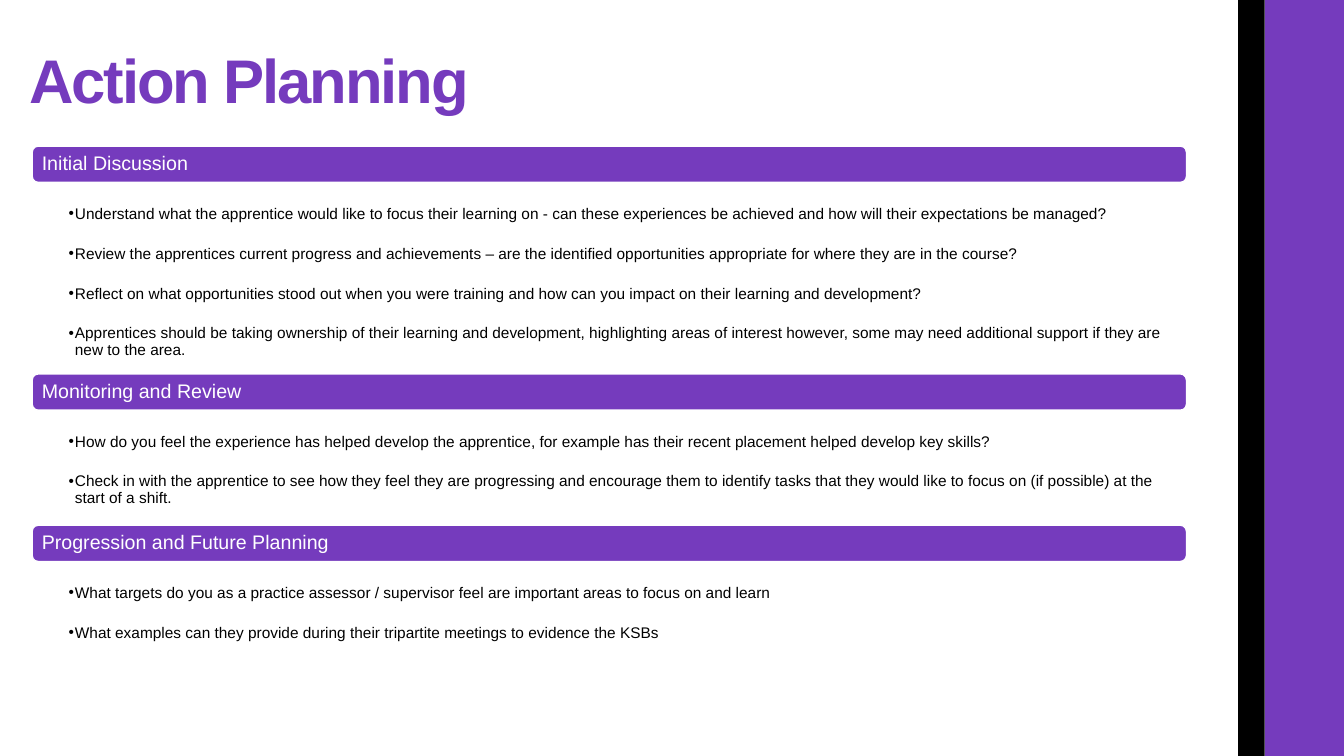
from pptx import Presentation
from pptx.util import Pt
from pptx.dml.color import RGBColor
from pptx.enum.shapes import MSO_SHAPE as SHAPE
from pptx.enum.text import MSO_ANCHOR as ANCHOR, PP_ALIGN as ALIGN
from lxml import etree

PURPLE, BLACK, WHITE = "753BBD", "000000", "FFFFFF"
NS = "{http://schemas.openxmlformats.org/drawingml/2006/main}"
LEFT, WIDTH, BAR_HEIGHT = 23, 824.5, 25.9

SECTIONS = [
    ("Initial Discussion", 136.8, [
        "Understand what the apprentice would like to focus their learning on - can these experiences be achieved and how will their expectations be managed?",
        "Review the apprentices current progress and achievements – are the identified opportunities appropriate for where they are in the course?",
        "Reflect on what opportunities stood out when you were training and how can you impact on their learning and development?",
        "Apprentices should be taking ownership of their learning and development, highlighting areas of interest however, some may need additional support if they are new to the area.",
    ]),
    ("Monitoring and Review", 82.2, [
        "How do you feel the experience has helped develop the apprentice, for example has their recent placement helped develop key skills?",
        "Check in with the apprentice to see how they feel they are progressing and encourage them to identify tasks that they would like to focus on (if possible) at the start of a shift.",
    ]),
    ("Progression and Future Planning", 56.9, [
        "What targets do you as a practice assessor / supervisor feel are important areas to focus on and learn",
        "What examples can they provide during their tripartite meetings to evidence the KSBs",
    ]),
]


def add_block(kind, left, top, width, height, color):
    sp = s.shapes.add_shape(kind, Pt(left), Pt(top), Pt(width), Pt(height))
    sp.shadow.inherit = False
    sp.fill.solid()
    sp.fill.fore_color.rgb = RGBColor.from_string(color)
    sp.line.fill.background()
    return sp


def set_text(tf, lines, size, color, insets, anchor):
    tf.word_wrap = True
    tf.vertical_anchor = anchor
    tf.margin_left, tf.margin_top, tf.margin_right, tf.margin_bottom = map(Pt, insets)
    tf.text = "\n".join(lines)
    for p in tf.paragraphs:
        p.alignment = ALIGN.LEFT
        p.line_spacing = 0.9
        for r in p.runs:
            r.font.name = "Arial"
            r.font.size = Pt(size)
            r.font.color.rgb = RGBColor.from_string(color)


prs = Presentation()
prs.slide_width, prs.slide_height = Pt(960), Pt(540)
s = prs.slides.add_slide(prs.slide_layouts[5])

add_block(SHAPE.RECTANGLE, 903.4, 0, 56.6, 540, PURPLE)
add_block(SHAPE.RECTANGLE, 884.4, 0, 19, 540, BLACK)

title = s.shapes.title
title.left, title.top, title.width, title.height = Pt(21), Pt(14.4), Pt(825), Pt(90)
set_text(title.text_frame, ["Action Planning"], 44, PURPLE, (0, 0, 0, 0), ANCHOR.MIDDLE)
r = title.text_frame.paragraphs[0].runs[0]
r.font.bold = True
r.font._element.set("spc", "-150")

top = 104.4
for heading, body_height, bullets in SECTIONS:
    bar = add_block(SHAPE.ROUNDED_RECTANGLE, LEFT, top, WIDTH, BAR_HEIGHT, PURPLE)
    bar.line.color.rgb = RGBColor.from_string(WHITE)
    bar.line.width = Pt(1)
    set_text(bar.text_frame, [heading], 14, WHITE, (5.6, 0, 5.6, 0), ANCHOR.MIDDLE)
    top += BAR_HEIGHT

    body = s.shapes.add_textbox(Pt(LEFT), Pt(top), Pt(WIDTH), Pt(body_height))
    set_text(body.text_frame, bullets, 11, BLACK, (26, 16.8, 8, 0), ANCHOR.TOP)
    for i, p in enumerate(body.text_frame.paragraphs):
        if i:
            p.space_before = Pt(16.6)
        pPr = p._p.get_or_add_pPr()
        pPr.set("marL", str(Pt(4.5)))
        pPr.set("indent", str(Pt(-4.5)))
        etree.SubElement(pPr, NS + "buFont", typeface="Arial")
        etree.SubElement(pPr, NS + "buChar", char="•")
    top += body_height

prs.save("out.pptx")
